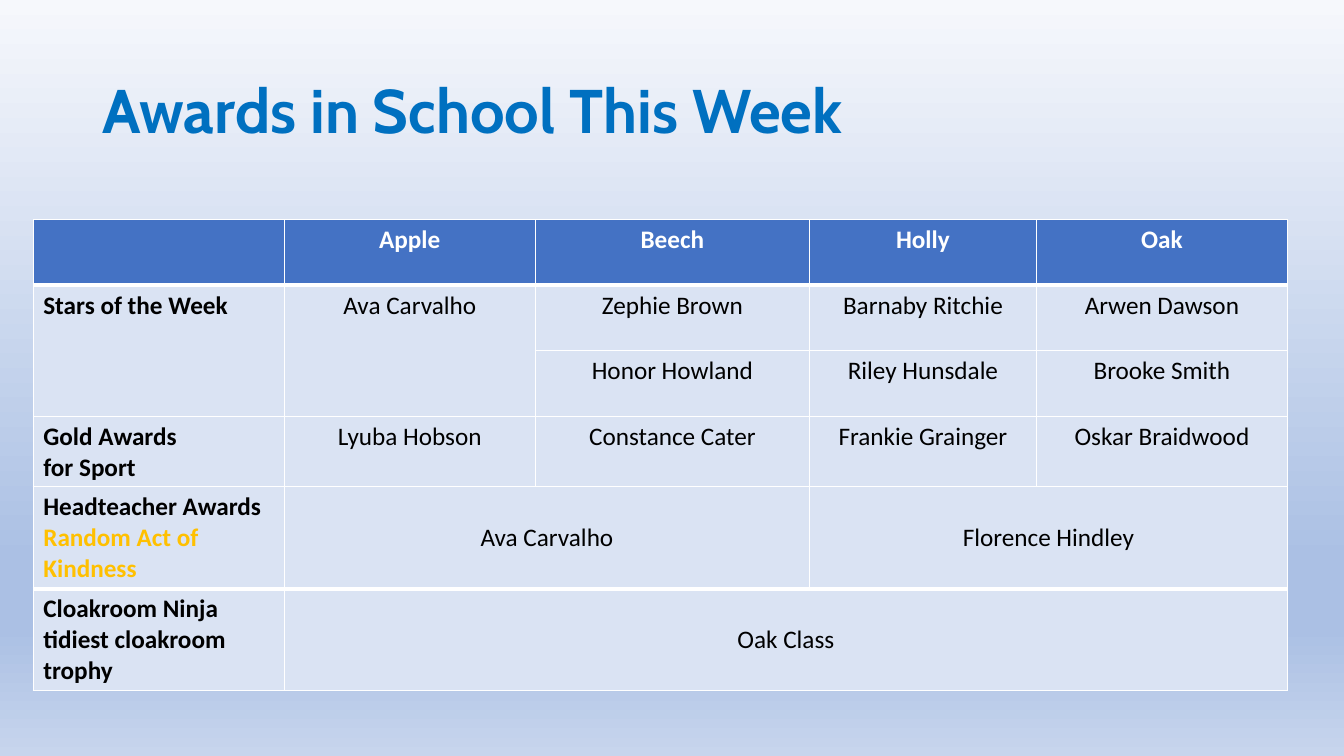
from pptx import Presentation
from pptx.dml.color import RGBColor
from pptx.enum.text import MSO_ANCHOR, PP_ALIGN
from pptx.oxml import parse_xml
from pptx.oxml.ns import nsdecls, qn
from pptx.util import Inches, Pt

WHITE, BLACK, GOLD = "FFFFFF", "000000", "FFC000"
TITLE_BLUE, HEADER_BLUE, PALE_BLUE = "0070C0", "4472C4", "DAE3F3"
BACKGROUND_STOPS = [(0, "F6F8FC"), (74, "ABC0E4"), (83, "ABC0E4"), (100, "C7D5ED")]

CLASSES = ["", "Apple", "Beech", "Holly", "Oak"]
WINNERS = [
    ["Stars of the Week", "Ava Carvalho", "Zephie Brown", "Barnaby Ritchie", "Arwen Dawson"],
    ["", "", "Honor Howland", "Riley Hunsdale", "Brooke Smith"],
    ["Gold Awards\nfor Sport", "Lyuba Hobson", "Constance Cater", "Frankie Grainger",
     "Oskar Braidwood"],
]


def color(value):
    return RGBColor.from_string(value)


def add_span(para, text, font, size, fill, bold):
    span = para.add_run()
    span.text = text
    span.font.name = font
    span.font.size = Pt(size)
    span.font.bold = bold
    span.font.color.rgb = color(fill)


def paint_background(page):
    fill = page.background.fill
    fill.gradient()
    fill.gradient_angle = 270
    stop_list = page.background._cSld.find(".//" + qn("a:gsLst"))
    for stop in list(stop_list):
        stop_list.remove(stop)
    for percent, value in BACKGROUND_STOPS:
        stop_list.append(parse_xml(
            f'<a:gs {nsdecls("a")} pos="{percent * 1000}"><a:srgbClr val="{value}"/></a:gs>'))


def add_title(page, left, top, width, height):
    box = page.shapes.add_textbox(Inches(left), Inches(top), Inches(width), Inches(height))
    frame = box.text_frame
    frame.word_wrap = True
    frame.vertical_anchor = MSO_ANCHOR.MIDDLE
    para = frame.paragraphs[0]
    para.line_spacing = 0.9
    add_span(para, "Awards in School This Week", "Cabin", 44, TITLE_BLUE, True)


def style_cell(cell, fill, bottom=1):
    """Give the cell white borders, with the bottom one in points, and a fill."""
    properties = cell._tc.get_or_add_tcPr()
    for side, points in (("L", 1), ("R", 1), ("T", 1), ("B", bottom)):
        properties.append(parse_xml(
            f'<a:ln{side} {nsdecls("a")} w="{Pt(points)}"><a:solidFill>'
            f'<a:srgbClr val="{WHITE}"/></a:solidFill></a:ln{side}>'))
    cell.fill.solid()
    cell.fill.fore_color.rgb = color(fill)


def write_cell(cell, spans, bold, centered):
    """Write (text, colour) spans; a line break in a text starts a new paragraph."""
    para = cell.text_frame.paragraphs[0]
    for text, fill in spans:
        for index, line in enumerate(text.split("\n")):
            if index:
                para = cell.text_frame.add_paragraph()
            add_span(para, line, "Calibri", 18, fill, bold)
    for para in cell.text_frame.paragraphs:
        para.alignment = PP_ALIGN.CENTER if centered else PP_ALIGN.LEFT


def add_grid(page, left, top, widths, heights):
    frame = page.shapes.add_table(len(heights), len(widths), Inches(left), Inches(top),
                                  Inches(sum(widths)), Inches(sum(heights)))
    table = frame.table
    for column, width in zip(table.columns, widths):
        column.width = Inches(width)
    for row, height in zip(table.rows, heights):
        row.height = Inches(height)
    return table


def add_class_awards(page, left, top):
    table = add_grid(page, left, top, [2.49, 2.49, 2.72, 2.25, 2.49], [0.65, 0.65, 0.65, 0.7])
    for row, texts in enumerate([CLASSES] + WINNERS):
        header = row == 0
        for column, text in enumerate(texts):
            cell = table.cell(row, column)
            style_cell(cell, HEADER_BLUE if header else PALE_BLUE, 3 if header else 1)
            if text:
                write_cell(cell, [(text, WHITE if header else BLACK)],
                           header or column == 0, column > 0)
    for column in range(2):
        table.cell(1, column).merge(table.cell(2, column))


def add_school_awards(page, left, top):
    table = add_grid(page, left, top, [2.49, 5.21, 4.74], [1.01, 1.01])
    rows = [
        ([("Headteacher Awards ", BLACK), ("Random Act of Kindness", GOLD)],
         ["Ava Carvalho", "Florence Hindley"]),
        ([("Cloakroom Ninja tidiest cloakroom trophy", BLACK)], ["Oak Class"]),
    ]
    for row, (award, winners) in enumerate(rows):
        for cell in table.rows[row].cells:
            style_cell(cell, PALE_BLUE, 3 if row == 0 else 1)
        write_cell(table.cell(row, 0), award, True, False)
        for column, winner in enumerate(winners, start=1):
            cell = table.cell(row, column)
            cell.vertical_anchor = MSO_ANCHOR.MIDDLE
            write_cell(cell, [(winner, BLACK)], False, True)
    table.cell(1, 1).merge(table.cell(1, 2))


def main():
    deck = Presentation()
    deck.slide_width, deck.slide_height = Inches(13.33), Inches(7.5)
    page = deck.slides.add_slide(deck.slide_layouts[6])
    paint_background(page)
    add_title(page, 0.92, 0.4, 11.5, 1.45)
    add_class_awards(page, 0.33, 2.18)
    add_school_awards(page, 0.33, 4.83)
    deck.save("out.pptx")


if __name__ == "__main__":
    main()
